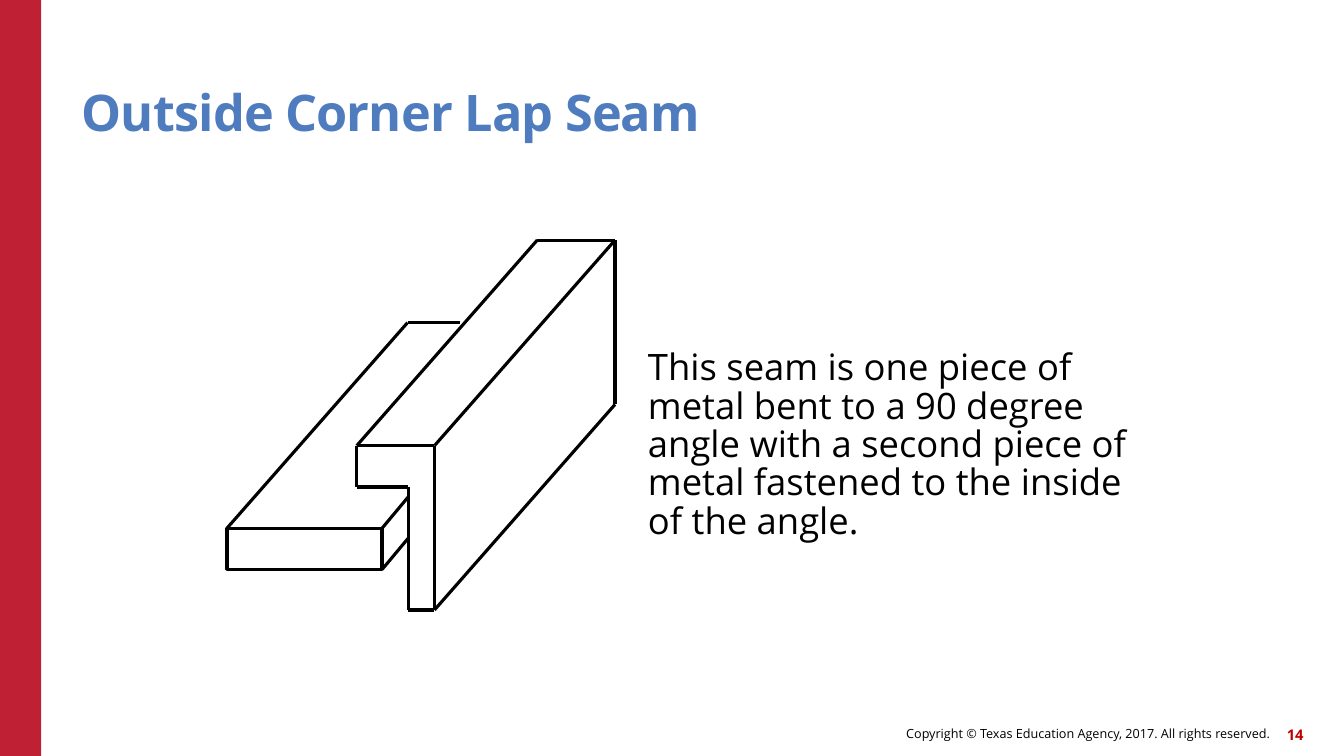
from pptx import Presentation
from pptx.dml.color import RGBColor
from pptx.enum.shapes import MSO_CONNECTOR, MSO_SHAPE
from pptx.enum.text import MSO_ANCHOR, PP_ALIGN
from pptx.oxml.ns import qn
from pptx.util import Cm, Pt
from lxml import etree

STRAIGHT = MSO_CONNECTOR.STRAIGHT
RECTANGLE = MSO_SHAPE.RECTANGLE
TOP, MIDDLE, BOTTOM = MSO_ANCHOR.TOP, MSO_ANCHOR.MIDDLE, MSO_ANCHOR.BOTTOM
LEFT, RIGHT = PP_ALIGN.LEFT, PP_ALIGN.RIGHT

RED = RGBColor(0xC0, 0x20, 0x33)
DARK_RED = RGBColor(0xC0, 0x00, 0x00)
BLUE = RGBColor(0x4E, 0x7C, 0xBE)
BLACK = RGBColor(0x00, 0x00, 0x00)

FONT = "Open Sans"
EDGE_WIDTH = Pt(2.25)

# Offset from the front face of a sheet to its back edge, in cm
DEPTH_X, DEPTH_Y = 4.55, -5.18


def add_text(slide, text, left, top, width, height, *, size, color=BLACK,
             bold=False, align=LEFT, anchor=TOP, inset_x=0, inset_y=0,
             line_spacing=None, tracking=None):
    """Add a one-paragraph text box; lengths in cm, tracking in hundredths of a point."""
    box = slide.shapes.add_textbox(Cm(left), Cm(top), Cm(width), Cm(height))
    frame = box.text_frame
    frame.word_wrap = True
    frame.vertical_anchor = anchor
    frame.margin_left = frame.margin_right = Cm(inset_x)
    frame.margin_top = frame.margin_bottom = Cm(inset_y)
    paragraph = frame.paragraphs[0]
    paragraph.alignment = align
    if line_spacing:
        paragraph.line_spacing = line_spacing
    run = paragraph.add_run()
    run.text = text
    run.font.name = FONT
    run.font.size = Pt(size)
    run.font.bold = bold
    run.font.color.rgb = color
    if tracking:
        run.font._element.set("spc", str(tracking))


def add_rectangle(shapes, left, top, width, height, fill=None, line=None):
    rectangle = shapes.add_shape(RECTANGLE, Cm(left), Cm(top), Cm(width), Cm(height))
    rectangle.shadow.inherit = False
    if fill is None:
        rectangle.fill.background()
    else:
        rectangle.fill.solid()
        rectangle.fill.fore_color.rgb = fill
    if line is None:
        rectangle.line.fill.background()
    else:
        rectangle.line.color.rgb = line
        rectangle.line.width = EDGE_WIDTH


def add_edge(shapes, start, end):
    edge = shapes.add_connector(STRAIGHT, *(Cm(value) for value in (*start, *end)))
    edge.line.color.rgb = BLACK
    edge.line.width = EDGE_WIDTH
    etree.SubElement(edge._element.spPr, qn("a:effectLst"))


def add_path(shapes, *points):
    """Join consecutive points with edges."""
    for start, end in zip(points, points[1:]):
        add_edge(shapes, start, end)


def to_back(point):
    return round(point[0] + DEPTH_X, 2), round(point[1] + DEPTH_Y, 2)


def add_flat_sheet(shapes):
    left, top, width, height = 5.72, 13.31, 3.91, 1.04
    add_rectangle(shapes, left, top, width, height, line=BLACK)
    front_left = (left, top)
    back_left = to_back(front_left)
    add_path(shapes, front_left, back_left, (11.58, back_left[1]))
    for y in (top, top + height):
        add_edge(shapes, (left + width, y), (10.29, y - 0.79))


def add_bent_sheet(shapes):
    top_left, top_right = (8.99, 11.23), (10.95, 11.23)
    bottom_right = (10.95, 15.37)
    add_path(shapes, top_left, (8.99, 12.27), (10.29, 12.27), (10.29, 15.37),
             bottom_right, top_right, top_left)
    corners = (top_left, top_right, bottom_right)
    for corner in corners:
        add_edge(shapes, corner, to_back(corner))
    add_path(shapes, *map(to_back, corners))


def main():
    presentation = Presentation()
    presentation.slide_width, presentation.slide_height = Cm(33.87), Cm(19.05)
    slide = presentation.slides.add_slide(presentation.slide_layouts[6])

    add_rectangle(slide.shapes, 0, 0, 1.04, 19.05, fill=RED)
    add_text(slide, "Copyright © Texas Education Agency, 2017. All rights reserved.",
             15.6, 18.08, 16.4, 0.81, size=9, align=RIGHT, anchor=MIDDLE)
    add_text(slide, "14", 31.78, 18.11, 1.07, 0.81, size=10.5, color=DARK_RED,
             bold=True, align=RIGHT, anchor=MIDDLE)
    add_text(slide, "Outside Corner Lap Seam", 2.06, 1.14, 27.94, 2.44, size=36,
             color=BLUE, bold=True, anchor=BOTTOM, line_spacing=0.9, tracking=-60)
    add_text(slide, "This seam is one piece of metal bent to a 90 degree angle with "
             "a second piece of metal fastened to the inside of the angle.",
             16.08, 8.69, 12.7, 5.82, size=26, inset_x=0.25, inset_y=0.13,
             line_spacing=0.88)

    seam = slide.shapes.add_group_shape()
    add_flat_sheet(seam.shapes)
    add_bent_sheet(seam.shapes)

    presentation.save("out.pptx")


if __name__ == "__main__":
    main()
